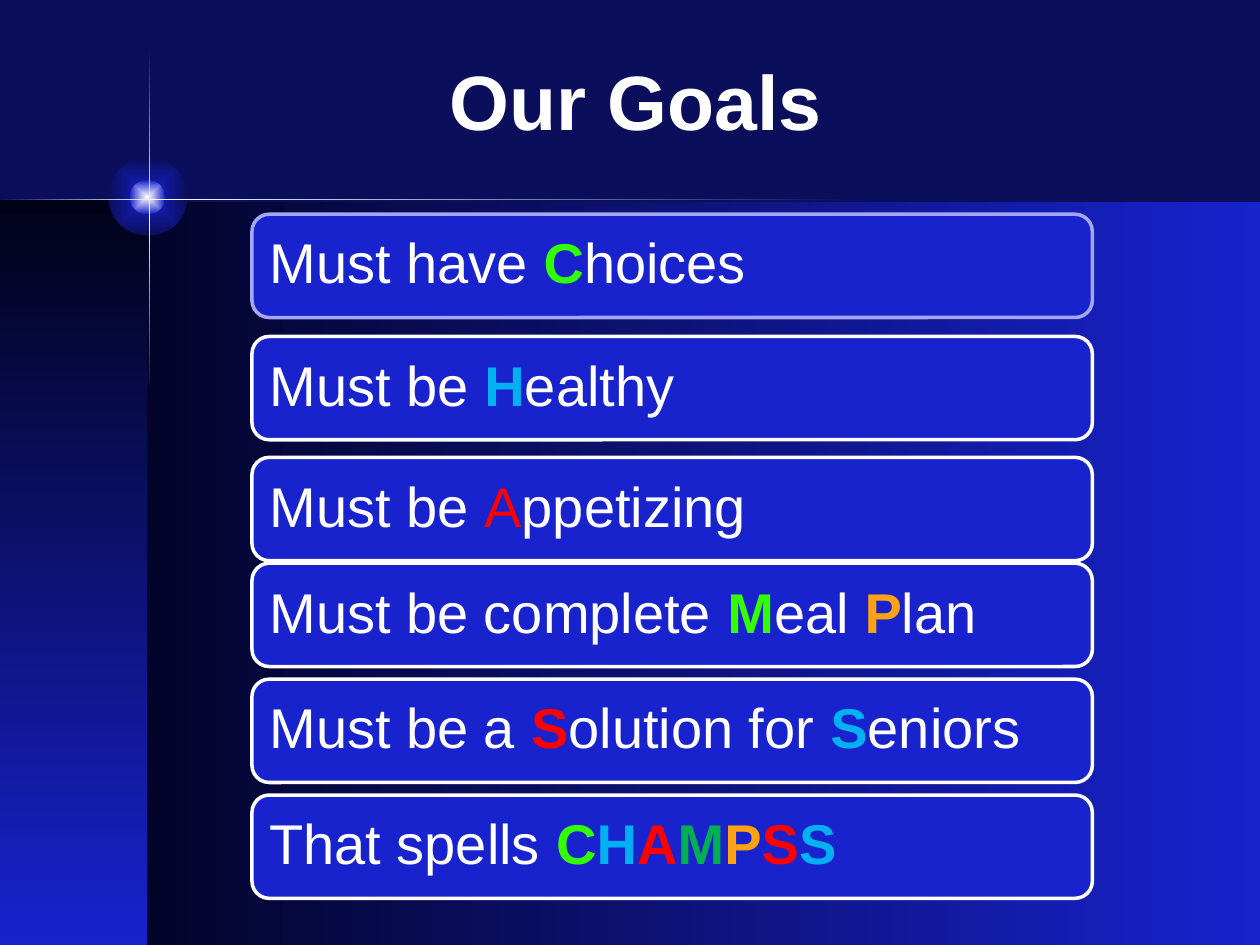
from lxml import etree
from pptx import Presentation
from pptx.dml.color import RGBColor
from pptx.enum import shapes, text
from pptx.oxml import ns
from pptx.util import Inches, Pt

NAVY = RGBColor(0x0A, 0x0E, 0x5B)
MIDNIGHT = RGBColor(0x03, 0x04, 0x2A)
BLACK_BLUE = RGBColor(0x01, 0x02, 0x18)
BLUE = RGBColor(0x18, 0x22, 0xCD)
LAVENDER = RGBColor(0xA3, 0xA7, 0xF5)
WHITE = RGBColor(0xFF, 0xFF, 0xFF)
LIME = RGBColor(0x33, 0xFF, 0x00)
SKY = RGBColor(0x00, 0xB0, 0xF0)
RED = RGBColor(0xFF, 0x00, 0x00)
GREEN = RGBColor(0x00, 0xB0, 0x50)
ORANGE = RGBColor(0xFF, 0xA3, 0x14)

RECTANGLE = shapes.MSO_SHAPE.RECTANGLE
OVAL = shapes.MSO_SHAPE.OVAL
FONT = "Arial"

BACKDROP = [
    (RECTANGLE, (1.17, 1.6, 8.83, 5.9), (MIDNIGHT, BLUE), 0),
    (RECTANGLE, (0, 1.58, 1.17, 5.92), (BLACK_BLUE, BLUE), 90),
    (OVAL, (0.86, 1.25, 0.63, 0.62), (BLUE, NAVY), None),
    (OVAL, (1.03, 1.43, 0.28, 0.27), (WHITE, BLUE), None),
    (RECTANGLE, (0, 1.58, 2.5, 0.01), (NAVY, WHITE, NAVY), 0),
    (RECTANGLE, (1.18, 0.39, 0.01, 2.67), (NAVY, WHITE, NAVY), 90),
    (RECTANGLE, (1.25, 1.58, 5.5, 0.01), (WHITE, NAVY), 0),
]

GOALS = [
    (1.7, [("Must have ", WHITE), ("C", LIME), ("hoices", WHITE)]),
    (2.67, [("Must be ", WHITE), ("H", SKY), ("ealthy", WHITE)]),
    (3.63, [("Must be ", WHITE), ("A", RED, False), ("ppetizing", WHITE)]),
    (4.47, [("Must be complete ", WHITE), ("M", LIME), ("eal ", WHITE),
            ("P", ORANGE), ("lan", WHITE)]),
    (5.39, [("Must be a ", WHITE), ("S", RED), ("olution for ", WHITE),
            ("S", SKY), ("eniors", WHITE)]),
    (6.31, [("That spells ", WHITE), ("C", LIME), ("H", SKY), ("A", RED),
            ("M", GREEN), ("P", ORANGE), ("S", RED), ("S", SKY)]),
]


def add_plain_shape(slide, kind, box):
    shape = slide.shapes.add_shape(kind, *(Inches(length) for length in box))
    shape.shadow.inherit = False
    return shape


def set_gradient(shape, colors, angle):
    shape.fill.gradient()
    gradient = shape._element.spPr.find(ns.qn("a:gradFill"))
    for child in list(gradient):
        gradient.remove(child)
    stops = etree.SubElement(gradient, ns.qn("a:gsLst"))
    for index, color in enumerate(colors):
        position = str(100000 * index // (len(colors) - 1))
        stop = etree.SubElement(stops, ns.qn("a:gs"), pos=position)
        etree.SubElement(stop, ns.qn("a:srgbClr"), val=str(color))
    if angle is None:
        radial = etree.SubElement(gradient, ns.qn("a:path"), path="shape")
        etree.SubElement(radial, ns.qn("a:fillToRect"),
                         l="50000", t="50000", r="50000", b="50000")
    else:
        etree.SubElement(gradient, ns.qn("a:lin"), ang=str(angle * 60000), scaled="0")


def add_gradient_shape(slide, kind, box, colors, angle):
    shape = add_plain_shape(slide, kind, box)
    shape.line.fill.background()
    set_gradient(shape, colors, angle)


def set_title(slide, title_text):
    title = slide.shapes.title
    title.left, title.top = Inches(0.17), Inches(0.17)
    title.width, title.height = Inches(9.75), Inches(1.25)
    title.text_frame.text = title_text
    title.text_frame.vertical_anchor = text.MSO_ANCHOR.MIDDLE
    paragraph = title.text_frame.paragraphs[0]
    paragraph.alignment = text.PP_ALIGN.CENTER
    paragraph.font.name = FONT
    paragraph.font.size = Pt(44)
    paragraph.font.bold = True
    paragraph.font.color.rgb = WHITE


def add_run(paragraph, words, color, bold=None):
    run = paragraph.add_run()
    run.text = words
    run.font.color.rgb = color
    run.font.bold = color != WHITE if bold is None else bold


def add_goal(slide, top, pieces, outline):
    shape = add_plain_shape(slide, shapes.MSO_SHAPE.ROUNDED_RECTANGLE,
                            (2, top, 6.67, 0.82))
    shape.fill.solid()
    shape.fill.fore_color.rgb = BLUE
    shape.line.color.rgb = outline
    shape.line.width = Pt(2)
    frame = shape.text_frame
    frame.word_wrap = True
    frame.vertical_anchor = text.MSO_ANCHOR.MIDDLE
    frame.margin_left = frame.margin_right = Inches(0.1)
    frame.margin_top = frame.margin_bottom = Inches(0.1)
    paragraph = frame.paragraphs[0]
    paragraph.alignment = text.PP_ALIGN.LEFT
    paragraph.line_spacing = 0.9
    paragraph.font.name = FONT
    paragraph.font.size = Pt(32)
    for piece in pieces:
        add_run(paragraph, *piece)


def main():
    presentation = Presentation()
    presentation.slide_width, presentation.slide_height = Inches(10), Inches(7.5)
    slide = presentation.slides.add_slide(presentation.slide_layouts[5])
    slide.background.fill.solid()
    slide.background.fill.fore_color.rgb = NAVY
    for kind, box, colors, angle in BACKDROP:
        add_gradient_shape(slide, kind, box, colors, angle)
    set_title(slide, "Our Goals")
    for index, (top, pieces) in enumerate(GOALS):
        add_goal(slide, top, pieces, WHITE if index else LAVENDER)
    presentation.save("out.pptx")


if __name__ == "__main__":
    main()
